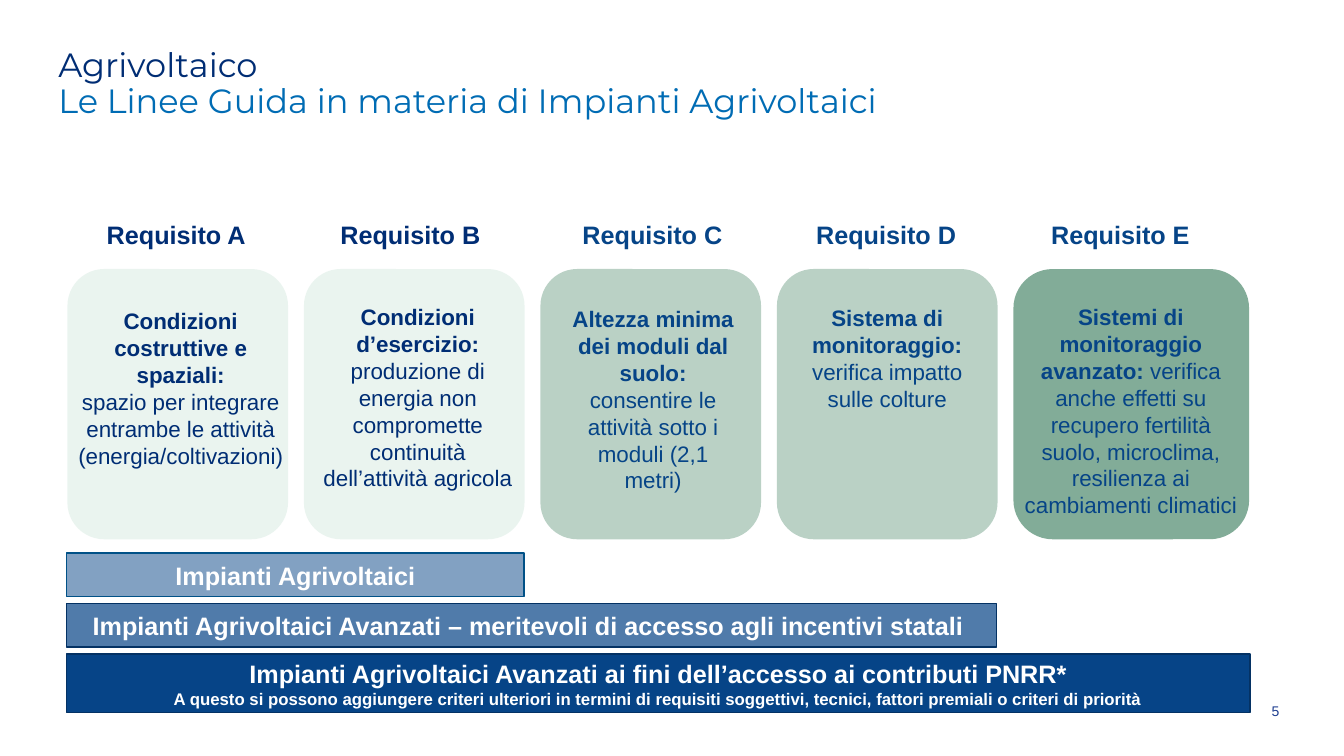
from lxml import etree
from pptx import Presentation
from pptx.dml.color import RGBColor
from pptx.enum.shapes import MSO_SHAPE
from pptx.enum.text import MSO_ANCHOR, PP_ALIGN
from pptx.oxml.ns import qn
from pptx.util import Cm, Pt

LEFT, CENTER, RIGHT = PP_ALIGN.LEFT, PP_ALIGN.CENTER, PP_ALIGN.RIGHT
TOP, MIDDLE = MSO_ANCHOR.TOP, MSO_ANCHOR.MIDDLE
RECTANGLE, ROUNDED = MSO_SHAPE.RECTANGLE, MSO_SHAPE.ROUNDED_RECTANGLE
NAVY, BLUE, SKY, WHITE = "002D74", "064487", "006CB4", "FFFFFF"
MINT, GREEN = "9ACCB3", "408061"

TITLE = [("Agrivoltaico", NAVY),
         ("Le Linee Guida in materia di Impianti Agrivoltaici", SKY)]

# letter, text colour, card fill, opacity %, card width, heading (left, width),
# body (left, top, width, height), paragraphs made of (words, bold)
REQUIREMENTS = [
    ("A", NAVY, MINT, 20, 5.56, (2.44, 4.39), (1.7, 7.62, 5.71, 4.37),
     [[("Condizioni costruttive e spaziali:", True)],
      [("spazio per integrare entrambe le attività (energia/coltivazioni)", False)]]),
    ("B", NAVY, MINT, 20, 5.56, (8.33, 4.6), (7.7, 7.52, 5.66, 5.05),
     [[("Condizioni d’esercizio:", True)],
      [("produzione di energia non compromette continuità dell’attività agricola", False)]]),
    ("C", BLUE, GREEN, 36, 5.56, (14.43, 4.39), (14.07, 7.57, 4.78, 5.05),
     [[("Altezza minima dei moduli dal suolo:", True)],
      [("consentire le attività sotto i moduli (2,1 metri)", False)]]),
    ("D", BLUE, GREEN, 36, 5.56, (20.32, 4.39), (19.86, 7.54, 5, 3),
     [[("Sistema di monitoraggio: ", True), ("verifica impatto sulle colture", False)]]),
    ("E", BLUE, GREEN, 65, 5.94, (26.24, 4.78), (25.53, 7.52, 5.94, 5.74),
     [[("Sistemi di monitoraggio avanzato: ", True),
       ("verifica anche effetti su recupero fertilità suolo, microclima, "
        "resilienza ai cambiamenti climatici", False)]]),
]
CARD_LEFT, CARD_TOP, CARD_PITCH, CARD_HEIGHT = 1.7, 6.78, 5.96, 6.81

# width, height, opacity %, outline, lines of (words, size)
BARS = [
    (11.53, 1.1, 50, "005187", [("Impianti Agrivoltaici", 18)]),
    (23.44, 1.1, 70, "043264",
     [("Impianti Agrivoltaici Avanzati – meritevoli di accesso agli incentivi statali ", 18)]),
    (29.82, 1.48, 100, "043264",
     [("Impianti Agrivoltaici Avanzati ai fini dell’accesso ai contributi PNRR*", 18),
      ("A questo si possono aggiungere criteri ulteriori in termini di requisiti "
       "soggettivi, tecnici, fattori premiali o criteri di priorità", 12)]),
]
BAR_LEFT, BAR_TOP, BAR_PITCH = 1.68, 13.94, 1.27


def color(value):
    return RGBColor.from_string(value)


def style(para, size, value, bold=None, font="Arial", align=LEFT):
    para.alignment = align
    para.font.name = font
    para.font.size = Pt(size)
    para.font.bold = bold
    para.font.color.rgb = color(value)


def add_box(page, left, top, width, height):
    box = page.shapes.add_textbox(Cm(left), Cm(top), Cm(width), Cm(height))
    box.text_frame.word_wrap = True
    box.text_frame.vertical_anchor = TOP
    return box.text_frame


def add_paragraph(frame, index):
    """Return the ready first paragraph, or a new one after it."""
    return frame.add_paragraph() if index else frame.paragraphs[0]


def add_panel(page, kind, left, top, width, height, fill, opacity, outline=None):
    panel = page.shapes.add_shape(kind, Cm(left), Cm(top), Cm(width), Cm(height))
    panel.shadow.inherit = False
    panel.fill.solid()
    panel.fill.fore_color.rgb = color(fill)
    if opacity < 100:
        tone = panel.fill._xPr.find(qn("a:solidFill"))[0]
        etree.SubElement(tone, qn("a:alpha")).set("val", str(opacity * 1000))
    if outline:
        panel.line.color.rgb = color(outline)
        panel.line.width = Pt(1)
    else:
        panel.line.fill.background()
    return panel.text_frame


def add_title(page):
    frame = add_box(page, 1.22, 1.09, 23.9, 1.83)
    for index, (words, value) in enumerate(TITLE):
        para = add_paragraph(frame, index)
        para.text = words
        para.line_spacing = 0.9
        style(para, 24, value, font="Montserrat")


def add_requirement(page, column, requirement):
    letter, ink, fill, opacity, width, (left, span_width), body, paragraphs = requirement
    heading = add_box(page, left, 5.41, span_width, 1.02).paragraphs[0]
    heading.text = f"Requisito {letter}"
    style(heading, 18, ink, True)

    add_panel(page, ROUNDED, CARD_LEFT + column * CARD_PITCH, CARD_TOP,
              width, CARD_HEIGHT, fill, opacity)
    frame = add_box(page, *body)
    for index, spans in enumerate(paragraphs):
        para = add_paragraph(frame, index)
        for words, bold in spans:
            span = para.add_run()
            span.text = words
            span.font.bold = bold
        style(para, 16, ink, align=CENTER)


def add_bar(page, row, bar):
    width, height, opacity, outline, lines = bar
    frame = add_panel(page, RECTANGLE, BAR_LEFT, BAR_TOP + row * BAR_PITCH,
                      width, height, BLUE, opacity, outline)
    frame.word_wrap = True
    frame.vertical_anchor = MIDDLE
    for index, (words, size) in enumerate(lines):
        para = add_paragraph(frame, index)
        para.text = words
        style(para, size, WHITE, True, align=CENTER)


def main():
    deck = Presentation()
    deck.slide_width, deck.slide_height = Cm(33.87), Cm(19.05)
    page = deck.slides.add_slide(deck.slide_layouts[6])
    add_title(page)
    for column, requirement in enumerate(REQUIREMENTS):
        add_requirement(page, column, requirement)
    for row, bar in enumerate(BARS):
        add_bar(page, row, bar)
    number = add_box(page, 29.9, 17.58, 2.69, 1.19).paragraphs[0]
    number.text = "5 "
    style(number, 10, "1D3D90", align=RIGHT)
    deck.save("out.pptx")


if __name__ == "__main__":
    main()
